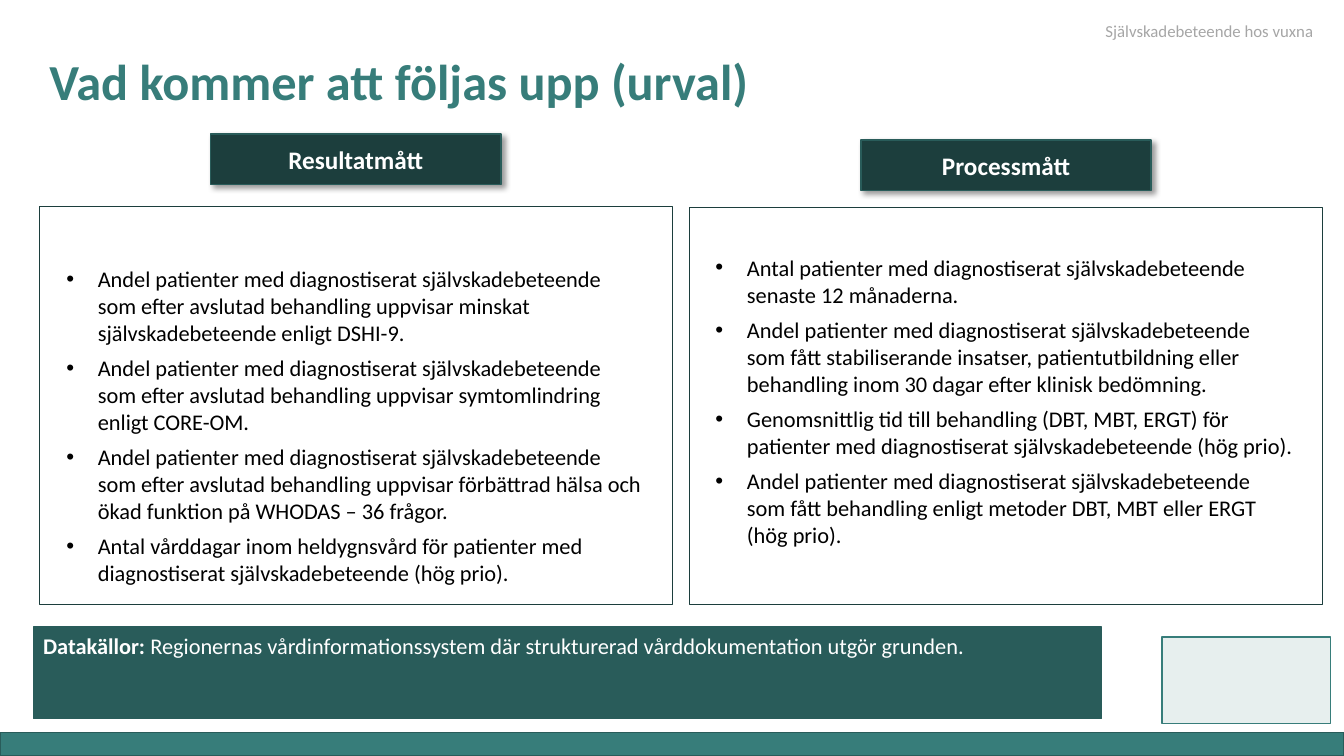
from lxml import etree
from pptx import Presentation
from pptx.dml.color import RGBColor
from pptx.enum import shapes, text
from pptx.oxml import parse_xml
from pptx.oxml.ns import nsdecls, qn
from pptx.util import Pt


def style(par, size, color, bold=False):
    font = par.font
    font.name, font.size, font.bold = "Calibri", Pt(size), bold
    font.color.rgb = RGBColor.from_string(color)


def rect(left, top, width, height, fill, line):
    box = slide.shapes.add_shape(
        shapes.MSO_SHAPE.RECTANGLE, Pt(left), Pt(top), Pt(width), Pt(height))
    box.shadow.inherit = False
    box.fill.solid()
    box.fill.fore_color.rgb = RGBColor.from_string(fill)
    box.line.color.rgb = RGBColor.from_string(line)
    box.line.width = Pt(1)
    return box


TEAL, MID, DARK, WHITE = "377D7A", "295C5A", "1C3E3D", "FFFFFF"

prs = Presentation()
prs.slide_width, prs.slide_height = Pt(960), Pt(540)
slide = prs.slides.add_slide(prs.slide_layouts[5])

# Title and topic
title = slide.shapes.title
title.left, title.top, title.width, title.height = Pt(28), Pt(35.3), Pt(720), Pt(48)
frame = title.text_frame
frame.text = "Vad kommer att följas upp (urval)"
frame.auto_size = text.MSO_AUTO_SIZE.NONE
frame.vertical_anchor = text.MSO_ANCHOR.BOTTOM
par = frame.paragraphs[0]
par.alignment = text.PP_ALIGN.LEFT
par.line_spacing = 0.9
style(par, 36, TEAL, True)

topic = slide.shapes.add_textbox(Pt(782.5), Pt(11.5), Pt(170), Pt(21.6))
topic.text_frame.word_wrap = True
topic.text_frame.text = "Självskadebeteende hos vuxna"
style(topic.text_frame.paragraphs[0], 12, "A6A6A6")

# Columns: heading, its left and top, frame left and top, list left, top and height, items
cols = [
    ("Resultatmått", 150.4, 95.8, 28, 147.6, 40.3, 185.8, 239, [
        "Andel patienter med diagnostiserat självskadebeteende som efter avslutad "
        "behandling uppvisar minskat självskadebeteende enligt DSHI-9.",
        "Andel patienter med diagnostiserat självskadebeteende som efter avslutad "
        "behandling uppvisar symtomlindring enligt CORE-OM.",
        "Andel patienter med diagnostiserat självskadebeteende som efter avslutad "
        "behandling uppvisar förbättrad hälsa och ökad funktion på WHODAS – 36 frågor.",
        "Antal vårddagar inom heldygnsvård för patienter med diagnostiserat "
        "självskadebeteende (hög prio).",
    ]),
    ("Processmått", 614.9, 100, 492.5, 148.3, 504, 177.8, 219.6, [
        "Antal patienter med diagnostiserat självskadebeteende senaste 12 månaderna.",
        "Andel patienter med diagnostiserat självskadebeteende som fått stabiliserande "
        "insatser, patientutbildning eller behandling inom 30 dagar efter klinisk bedömning.",
        "Genomsnittlig tid till behandling (DBT, MBT, ERGT) för patienter med "
        "diagnostiserat självskadebeteende (hög prio).",
        "Andel patienter med diagnostiserat självskadebeteende som fått behandling "
        "enligt metoder DBT, MBT eller ERGT (hög prio).",
    ]),
]
for head, hx, hy, fx, fy, lx, ly, high, items in cols:
    label = rect(hx, hy, 207.4, 36, DARK, MID)
    label.text_frame.text = head
    label.text_frame.vertical_anchor = text.MSO_ANCHOR.MIDDLE
    par = label.text_frame.paragraphs[0]
    par.alignment = text.PP_ALIGN.CENTER
    style(par, 18, WHITE, True)
    glow = label.element.spPr.find(qn("a:effectLst"))
    glow.append(parse_xml(
        f'<a:outerShdw {nsdecls("a")} blurRad="50800" dist="38100" dir="2700000" '
        'algn="tl" rotWithShape="0"><a:srgbClr val="000000">'
        '<a:alpha val="40000"/></a:srgbClr></a:outerShdw>'))

    rect(fx, fy, 452.2, 432 - fy, WHITE, DARK)
    area = slide.shapes.add_textbox(Pt(lx), Pt(ly), Pt(427), Pt(high))
    frame = area.text_frame
    frame.word_wrap = True
    frame.text = "\n".join(items)
    for par in frame.paragraphs:
        props = par._p.get_or_add_pPr()
        props.set("marL", str(Pt(22.5)))
        props.set("indent", str(-Pt(22.5)))
        etree.SubElement(props, qn("a:buFont"), typeface="Arial")
        etree.SubElement(props, qn("a:buChar"), char="•")
        par.space_after = Pt(6)
        style(par, 16, "000000")

# Data sources
data = rect(23.8, 447.8, 763.2, 65.5, MID, MID)
data.text_frame.vertical_anchor = text.MSO_ANCHOR.TOP
par = data.text_frame.paragraphs[0]
par.alignment = text.PP_ALIGN.LEFT
style(par, 16, WHITE)
lead = par.add_run()
lead.text = "Datakällor: "
lead.font.bold = True
par.add_run().text = (
    "Regionernas vårdinformationssystem där strukturerad vårddokumentation utgör grunden.")

# Plain sender block and bottom band
rect(830, 455, 120.5, 62, "E7EFEE", TEAL)
rect(0, 523.4, 960, 16.6, TEAL, MID)

prs.save("out.pptx")
